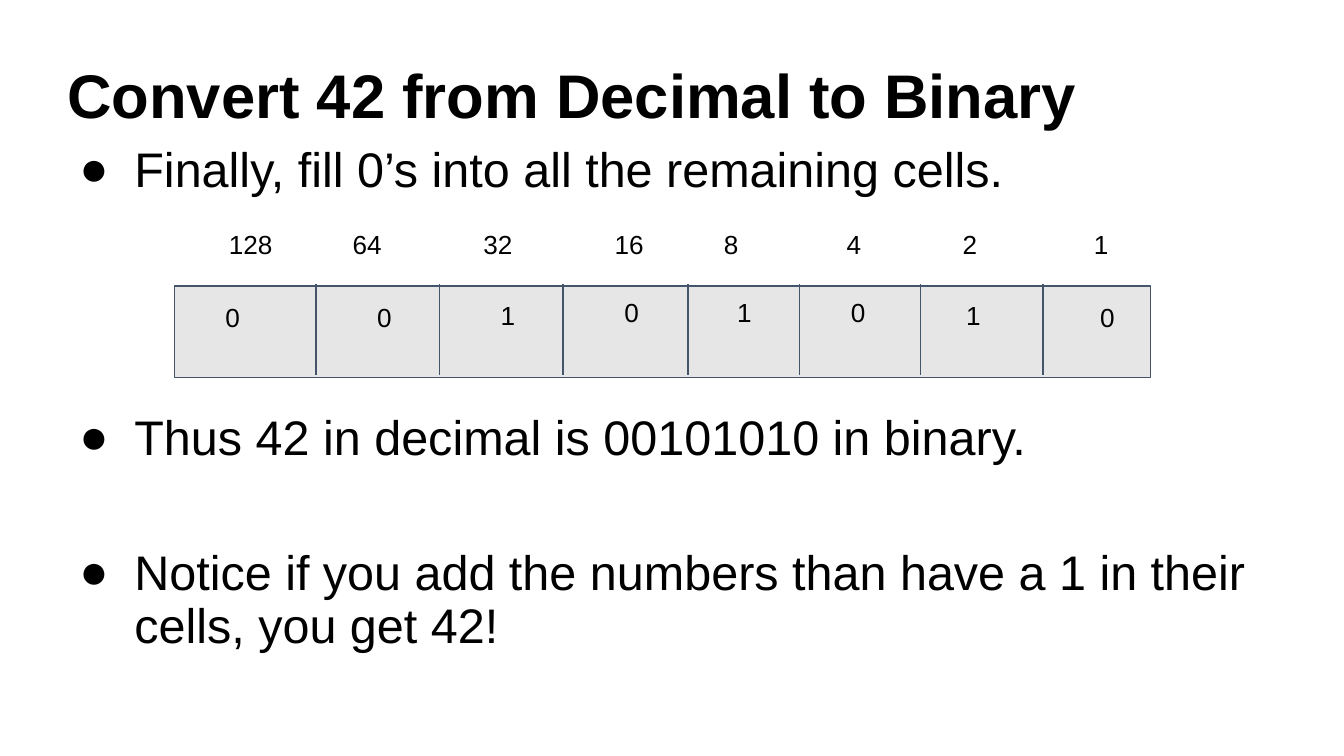
from lxml import etree
from pptx import Presentation
from pptx.dml.color import RGBColor
from pptx.enum.shapes import MSO_CONNECTOR, MSO_SHAPE
from pptx.enum.text import MSO_ANCHOR
from pptx.oxml.ns import qn
from pptx.util import Cm, Pt

COLORS = {"text": "000000", "fill": "E7E6E6", "line": "44546A"}
TITLE_FORMAT = {"name": "Arial", "size": Pt(33), "bold": True}
BODY_FORMAT = {"name": "Arial", "size": Pt(26)}
CELL_FORMAT = {"name": "Arial", "size": Pt(14)}

# Text of each bullet and the space before it, in points
BULLETS = [
    ("Finally, fill 0’s into all the remaining cells.", 0),
    ("Thus 42 in decimal is 00101010 in binary.", 115.5),
    ("Notice if you add the numbers than have a 1 in their cells, you get 42!", 44.5),
]

# Place values and their centres, in cm from the left of the label text
PLACE_VALUES = [(128, 0.93), (64, 3.13), (32, 5.6), (16, 8.08),
                (8, 10.01), (4, 12.33), (2, 14.52), (1, 17)]
DIVIDERS = [2.67, 5.01, 7.34, 9.7, 11.81, 14.1, 16.41]
# Digit, left and top relative to the register, and text inset, in cm
DIGITS = [
    (0, -0.02, 0.03, 0.98), (0, 2.85, 0.03, 0.98),
    (1, 5.18, 0, 0.98), (0, 7.52, -0.05, 0.98),
    (1, 9.65, -0.05, 0.98), (0, 11.94, -0.05, 0.84),
    (1, 14.1, 0, 0.86), (0, 16.39, 0.03, 1.1),
]


def apply_format(paragraph, values):
    for name, value in values.items():
        setattr(paragraph.font, name, value)
    paragraph.font.color.rgb = RGBColor.from_string(COLORS["text"])


def add_text_frame(slide, left, top, width, height, inset_x=0.25, inset_y=0.25):
    frame = slide.shapes.add_textbox(Cm(left), Cm(top), Cm(width), Cm(height)).text_frame
    settings = {
        "word_wrap": True, "margin_left": Cm(inset_x), "margin_right": Cm(0.25),
        "margin_top": Cm(inset_y), "margin_bottom": Cm(inset_y),
    }
    for name, value in settings.items():
        setattr(frame, name, value)
    return frame


def add_title(slide, left, top, width, height):
    frame = add_text_frame(slide, left, top, width, height, inset_y=0.13)
    frame.vertical_anchor = MSO_ANCHOR.MIDDLE
    paragraph = frame.paragraphs[0]
    paragraph.text = "Convert 42 from Decimal to Binary"
    paragraph.line_spacing = 0.9
    apply_format(paragraph, TITLE_FORMAT)


def add_bullet(paragraph):
    properties = paragraph._p.get_or_add_pPr()
    properties.set("marL", str(Cm(1.27)))
    properties.set("indent", str(-Cm(1.04)))
    color = etree.SubElement(properties, qn("a:buClr"))
    etree.SubElement(color, qn("a:srgbClr"), val=COLORS["text"])
    etree.SubElement(properties, qn("a:buFont"), typeface="Arial")
    etree.SubElement(properties, qn("a:buChar"), char="●")


def add_body(slide, left, top, width, height):
    frame = add_text_frame(slide, left, top, width, height, inset_y=0.13)
    for index, (text, space_before) in enumerate(BULLETS):
        paragraph = frame.add_paragraph() if index else frame.paragraphs[0]
        paragraph.text = text
        add_bullet(paragraph)
        paragraph.line_spacing = 0.9
        paragraph.space_before = Pt(space_before)
        apply_format(paragraph, BODY_FORMAT)


def add_place_values(slide, left, top, width, height):
    """Set the place values in one line on centred tab stops."""
    paragraph = add_text_frame(slide, left, top, width, height).paragraphs[0]
    paragraph.text = "".join(f"\t{value}" for value, _ in PLACE_VALUES)
    tabs = etree.SubElement(paragraph._p.get_or_add_pPr(), qn("a:tabLst"))
    for _, center in PLACE_VALUES:
        etree.SubElement(tabs, qn("a:tab"), pos=str(Cm(center)), algn="ctr")
    apply_format(paragraph, CELL_FORMAT)


def style_line(line):
    line.color.rgb = RGBColor.from_string(COLORS["line"])
    line.width = Pt(0.75)


def add_register(slide, left, top, width, height):
    """Draw the row of eight bit cells with their digits."""
    bar = slide.shapes.add_shape(
        MSO_SHAPE.RECTANGLE, Cm(left), Cm(top), Cm(width), Cm(height))
    bar.shadow.inherit = False
    bar.fill.solid()
    bar.fill.fore_color.rgb = RGBColor.from_string(COLORS["fill"])
    style_line(bar.line)

    line_top = top - 0.05
    for offset in DIVIDERS:
        x = Cm(left + offset)
        divider = slide.shapes.add_connector(
            MSO_CONNECTOR.STRAIGHT, x, Cm(line_top), x, Cm(line_top + height))
        style_line(divider.line)
        etree.SubElement(divider._element.spPr, qn("a:effectLst"))

    for digit, x, y, inset in DIGITS:
        frame = add_text_frame(slide, left + x, top + y, 2.16, height, inset_x=inset)
        frame.text = str(digit)
        apply_format(frame.paragraphs[0], CELL_FORMAT)


def main():
    presentation = Presentation()
    presentation.slide_width, presentation.slide_height = Cm(25.4), Cm(14.29)
    slide = presentation.slides.add_slide(presentation.slide_layouts[6])
    add_title(slide, 1.02, 1.07, 23.39, 1.6)
    add_body(slide, 1.02, 2.62, 23.39, 10.44)
    add_register(slide, 3.3, 5.41, 18.44, 1.73)
    add_place_values(slide, 3.56, 4.06, 18.54, 1.3)
    presentation.save("out.pptx")


if __name__ == "__main__":
    main()
